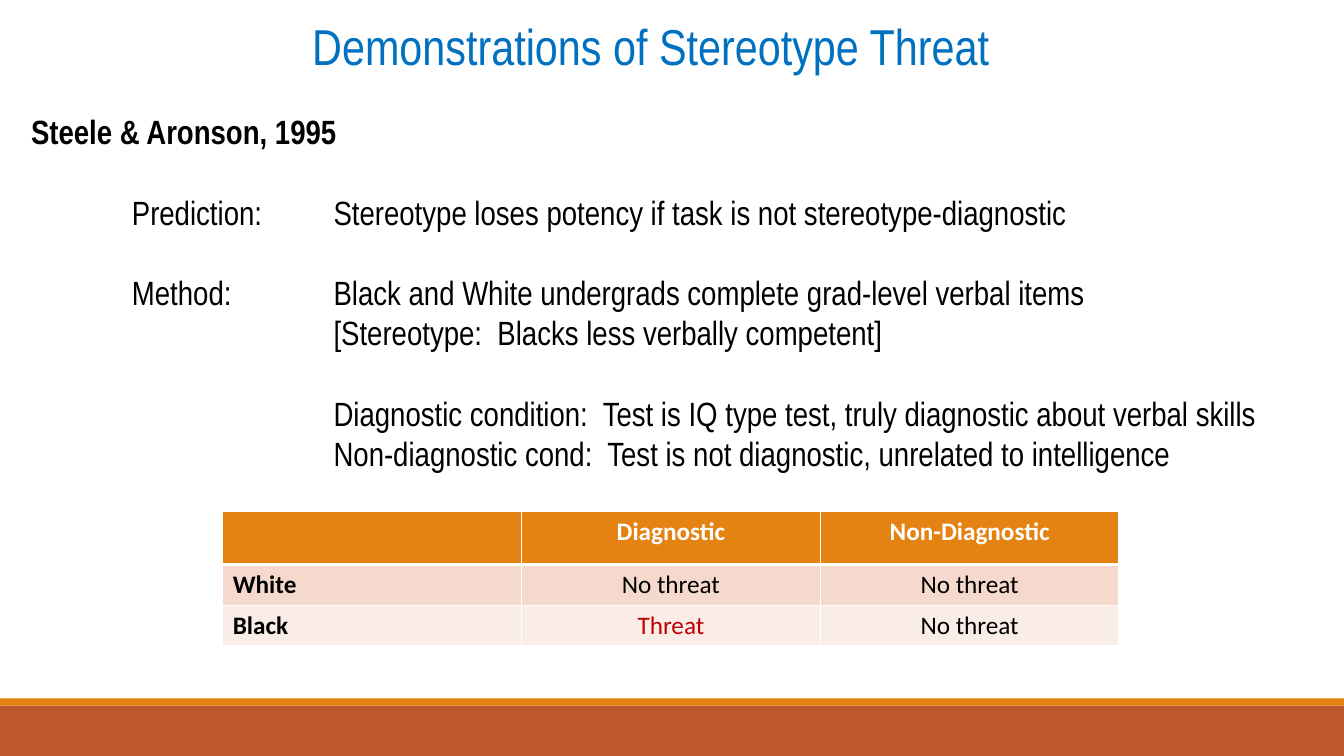
from lxml import etree
from pptx import Presentation
from pptx.dml.color import RGBColor
from pptx.enum import shapes, text
from pptx.oxml.ns import qn
from pptx.util import Inches, Pt

NARROW, SANS = "Arial Narrow", "Calibri"
BLACK, WHITE, BLUE, RED = "000000", "FFFFFF", "0070C0", "C00000"
ORANGE, RUST = "E48312", "BD582C"
ROW_FILLS = [ORANGE, "F5D9CC", "FAEDE7"]
LABEL_INDENT, DETAIL_INDENT = 1, 3

# Each line of the study: text, left indent in inches, whether a gap comes first
STUDY = [
    ("Steele & Aronson, 1995", 0, False),
    ("\tPrediction:\tStereotype loses potency if task is not stereotype-diagnostic", 0, True),
    ("\tMethod:\tBlack and White undergrads complete grad-level verbal items", 0, True),
    ("[Stereotype:  Blacks less verbally competent]", DETAIL_INDENT, False),
    ("Diagnostic condition:  Test is IQ type test, truly diagnostic about verbal skills",
     DETAIL_INDENT, True),
    ("Non-diagnostic cond:  Test is not diagnostic, unrelated to intelligence",
     DETAIL_INDENT, False),
]
RESULTS = [
    ["", "Diagnostic", "Non-Diagnostic"],
    ["White", "No threat", "No threat"],
    ["Black", "Threat", "No threat"],
]


def rgb(color):
    return RGBColor.from_string(color)


def style(paragraph, font, size, color, bold=False):
    paragraph.font.name = font
    paragraph.font.size = Pt(size)
    paragraph.font.color.rgb = rgb(color)
    paragraph.font.bold = bold


def text_frame(slide, left, top, width, height):
    box = slide.shapes.add_textbox(Inches(left), Inches(top), Inches(width), Inches(height))
    box.text_frame.word_wrap = True
    return box.text_frame


def add_footer(slide, left, top, width, height):
    """Draw a thin orange stripe above a rust band."""
    stripe = 0.07
    for y, depth, color in [(top + stripe, height - stripe, RUST), (top, stripe, ORANGE)]:
        band = slide.shapes.add_shape(shapes.MSO_SHAPE.RECTANGLE, Inches(left), Inches(y),
                                      Inches(width), Inches(depth))
        band.shadow.inherit = False
        band.fill.solid()
        band.fill.fore_color.rgb = rgb(color)
        band.line.fill.background()


def add_title(slide, left, top, width, height):
    title = text_frame(slide, left, top, width, height).paragraphs[0]
    title.text = "Demonstrations of Stereotype Threat"
    title.alignment = text.PP_ALIGN.CENTER
    style(title, NARROW, 36, BLUE)


def set_tab_stops(paragraph, *stops):
    """Set left tab stops, in inches, on a paragraph whose font is already set."""
    tabs = etree.Element(qn("a:tabLst"))
    for stop in stops:
        etree.SubElement(tabs, qn("a:tab"), pos=str(Inches(stop)), algn="l")
    paragraph._p.get_or_add_pPr().find(qn("a:defRPr")).addprevious(tabs)


def add_study(slide, left, top, width, height):
    frame = text_frame(slide, left, top, width, height)
    for i, (wording, indent, gap) in enumerate(STUDY):
        line = frame.paragraphs[0] if i == 0 else frame.add_paragraph()
        line.text = wording
        style(line, NARROW, 24, BLACK, bold=i == 0)
        if gap:
            line.space_before = Pt(28.8)
        if "\t" in wording:
            set_tab_stops(line, LABEL_INDENT, DETAIL_INDENT)
        if indent:
            properties = line._p.get_or_add_pPr()
            properties.set("marL", str(Inches(indent)))
            properties.set("indent", "0")


def set_borders(cell, bottom):
    """Draw white cell borders, 1 pt wide except for the bottom one."""
    properties = cell._tc.get_or_add_tcPr()
    for i, (side, points) in enumerate([("L", 1), ("R", 1), ("T", 1), ("B", bottom)]):
        line = etree.Element(qn(f"a:ln{side}"), w=str(Pt(points)))
        fill = etree.SubElement(line, qn("a:solidFill"))
        etree.SubElement(fill, qn("a:srgbClr"), val=WHITE)
        properties.insert(i, line)


def add_results(slide, left, top, width, height):
    header = 0.53
    table = slide.shapes.add_table(len(RESULTS), len(RESULTS[0]), Inches(left), Inches(top),
                                   Inches(width), Inches(height)).table
    for column in table.columns:
        column.width = Inches(width / len(RESULTS[0]))
    for r, entries in enumerate(RESULTS):
        table.rows[r].height = Inches(header if r == 0 else (height - header) / 2)
        for c, entry in enumerate(entries):
            cell = table.cell(r, c)
            cell.fill.solid()
            cell.fill.fore_color.rgb = rgb(ROW_FILLS[r])
            set_borders(cell, bottom=3 if r == 0 else 1)
            paragraph = cell.text_frame.paragraphs[0]
            paragraph.text = entry
            if c:
                paragraph.alignment = text.PP_ALIGN.CENTER
            color = WHITE if r == 0 else RED if entry == "Threat" else BLACK
            style(paragraph, SANS, 18, color, bold=r == 0 or c == 0)


def main():
    deck = Presentation()
    deck.slide_width, deck.slide_height = Inches(13.33), Inches(7.5)
    slide = deck.slides.add_slide(deck.slide_layouts[6])
    add_footer(slide, 0, 6.93, 13.33, 0.57)
    add_title(slide, 1.08, 0.1, 10.75, 1.11)
    add_study(slide, 0.21, 1.05, 12.89, 3.74)
    add_results(slide, 2.21, 5.07, 8.89, 1.34)
    deck.save("out.pptx")


if __name__ == "__main__":
    main()
